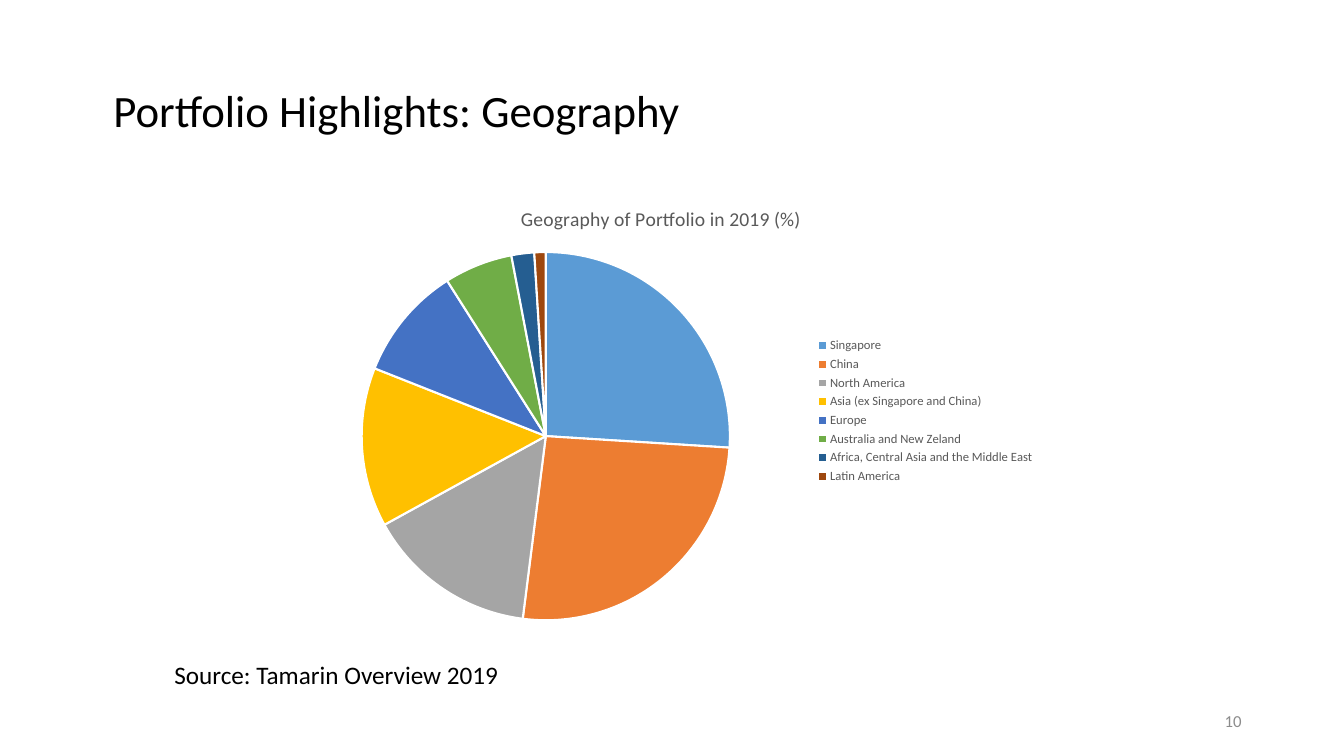
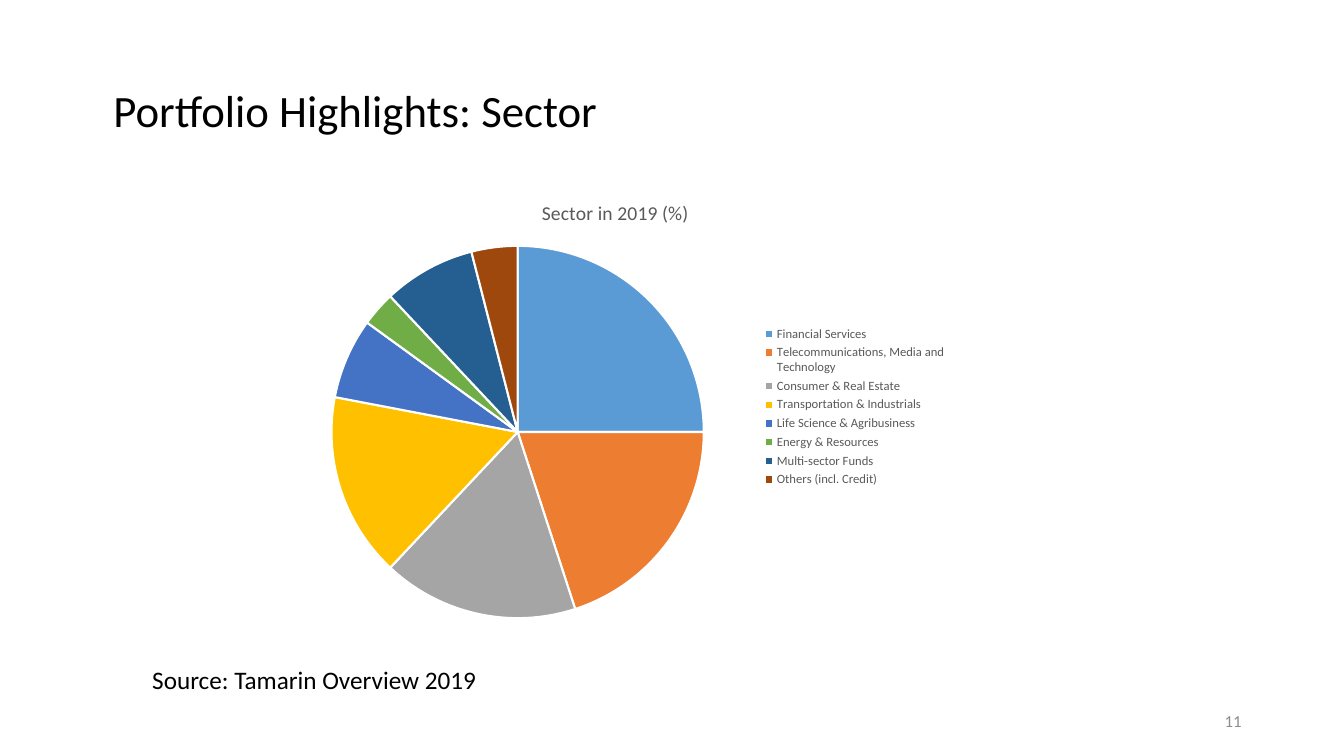
from dataclasses import dataclass

from pptx import Presentation
from pptx.chart.data import CategoryChartData
from pptx.dml.color import RGBColor
from pptx.enum.chart import XL_CHART_TYPE, XL_LEGEND_POSITION
from pptx.enum.text import MSO_ANCHOR, PP_ALIGN
from pptx.util import Emu, Pt

PIE = XL_CHART_TYPE.PIE
LEGEND_RIGHT = XL_LEGEND_POSITION.RIGHT
TOP, MIDDLE = MSO_ANCHOR.TOP, MSO_ANCHOR.MIDDLE
LEFT, RIGHT = PP_ALIGN.LEFT, PP_ALIGN.RIGHT

EMU_PER_PX = 9525
PAGE_WIDTH, PAGE_HEIGHT = 1280, 720
FONT = "Calibri"
BLACK, WHITE, DARK_GREY, MID_GREY = "000000", "FFFFFF", "595959", "8C8C8C"
SLICE_COLOURS = ("5B9BD5", "ED7D31", "A5A5A5", "FFC000",
                 "4472C4", "70AD47", "255E91", "9E480E")
SOURCE_TEXT = "Source: Tamarin Overview 2019"


@dataclass(frozen=True)
class Area:
    """A rectangle in px."""
    left: int
    top: int
    width: int
    height: int

    def emu(self) -> tuple[Emu, ...]:
        return tuple(px(n) for n in (self.left, self.top, self.width, self.height))


@dataclass(frozen=True)
class TextStyle:
    size: int
    colour: str = BLACK
    align: PP_ALIGN = LEFT
    anchor: MSO_ANCHOR = TOP
    wrap: bool = True
    line_spacing: float = 1.0
    margin_left: int = 10


@dataclass(frozen=True)
class PortfolioPage:
    title: str
    number: int
    chart_title: str
    chart_area: Area
    source_area: Area
    shares: dict[str, int]


TITLE_AREA = Area(88, 38, 1104, 139)
NUMBER_AREA = Area(904, 667, 288, 38)
TITLE_STYLE = TextStyle(32, anchor=MIDDLE, line_spacing=0.9, margin_left=20)
NUMBER_STYLE = TextStyle(12, MID_GREY, RIGHT, MIDDLE)
SOURCE_STYLE = TextStyle(18, wrap=False)

PAGES = (
    PortfolioPage(
        "Portfolio Highlights: Geography", 10,
        "Geography of Portfolio in 2019 (%)",
        Area(264, 179, 731, 425), Area(156, 623, 337, 38),
        {
            "Singapore": 26,
            "China": 26,
            "North America": 15,
            "Asia (ex Singapore and China)": 14,
            "Europe": 10,
            "Australia and New Zeland": 6,
            "Africa, Central Asia and the Middle East": 2,
            "Latin America": 1,
        },
    ),
    PortfolioPage(
        "Portfolio Highlights: Sector", 11,
        "Sector in 2019 (%)",
        Area(261, 173, 650, 429), Area(135, 628, 337, 38),
        {
            "Financial Services": 25,
            "Telecommunications, Media and Technology": 20,
            "Consumer & Real Estate": 17,
            "Transportation & Industrials": 16,
            "Life Science & Agribusiness": 7,
            "Energy & Resources": 3,
            "Multi-sector Funds": 8,
            "Others (incl. Credit)": 4,
        },
    ),
)


def px(length: int) -> Emu:
    return Emu(length * EMU_PER_PX)


def rgb(colour: str) -> RGBColor:
    return RGBColor.from_string(colour)


def set_all(target, values: dict) -> None:
    for name, value in values.items():
        setattr(target, name, value)


def set_font(font, size: int, colour: str) -> None:
    set_all(font, {"name": FONT, "size": Pt(size), "bold": False})
    font.color.rgb = rgb(colour)


def add_text(page, area: Area, text: str, style: TextStyle) -> None:
    frame = page.shapes.add_textbox(*area.emu()).text_frame
    set_all(frame, {
        "word_wrap": style.wrap,
        "vertical_anchor": style.anchor,
        "margin_left": px(style.margin_left),
    })
    para = frame.paragraphs[0]
    set_all(para, {"alignment": style.align, "line_spacing": style.line_spacing})
    span = para.add_run()
    span.text = text
    set_font(span.font, style.size, style.colour)


def add_pie(page, area: Area, title: str, shares: dict[str, int]) -> None:
    data = CategoryChartData()
    data.categories = list(shares)
    data.add_series("Series 1", list(shares.values()))
    chart = page.shapes.add_chart(PIE, *area.emu(), data).chart
    set_font(chart.font, 10, BLACK)

    chart.has_title = True
    span = chart.chart_title.text_frame.paragraphs[0].add_run()
    span.text = title
    set_font(span.font, 14, DARK_GREY)
    chart.chart_title.include_in_layout = False

    chart.has_legend = True
    set_all(chart.legend, {"position": LEGEND_RIGHT, "include_in_layout": False})
    set_font(chart.legend.font, 9, DARK_GREY)

    plot = chart.plots[0]
    plot.vary_by_categories = True
    for index, colour in enumerate(SLICE_COLOURS):
        slice_format = plot.series[0].points[index].format
        slice_format.fill.solid()
        slice_format.fill.fore_color.rgb = rgb(colour)
        slice_format.line.color.rgb = rgb(WHITE)
        slice_format.line.width = Pt(1.5)


def add_portfolio_page(deck, content: PortfolioPage) -> None:
    page = deck.slides.add_slide(deck.slide_layouts[6])
    add_text(page, TITLE_AREA, content.title, TITLE_STYLE)
    add_text(page, NUMBER_AREA, str(content.number), NUMBER_STYLE)
    add_pie(page, content.chart_area, content.chart_title, content.shares)
    add_text(page, content.source_area, SOURCE_TEXT, SOURCE_STYLE)


def main() -> None:
    deck = Presentation()
    set_all(deck, {"slide_width": px(PAGE_WIDTH), "slide_height": px(PAGE_HEIGHT)})
    for content in PAGES:
        add_portfolio_page(deck, content)
    deck.save("out.pptx")


if __name__ == "__main__":
    main()
